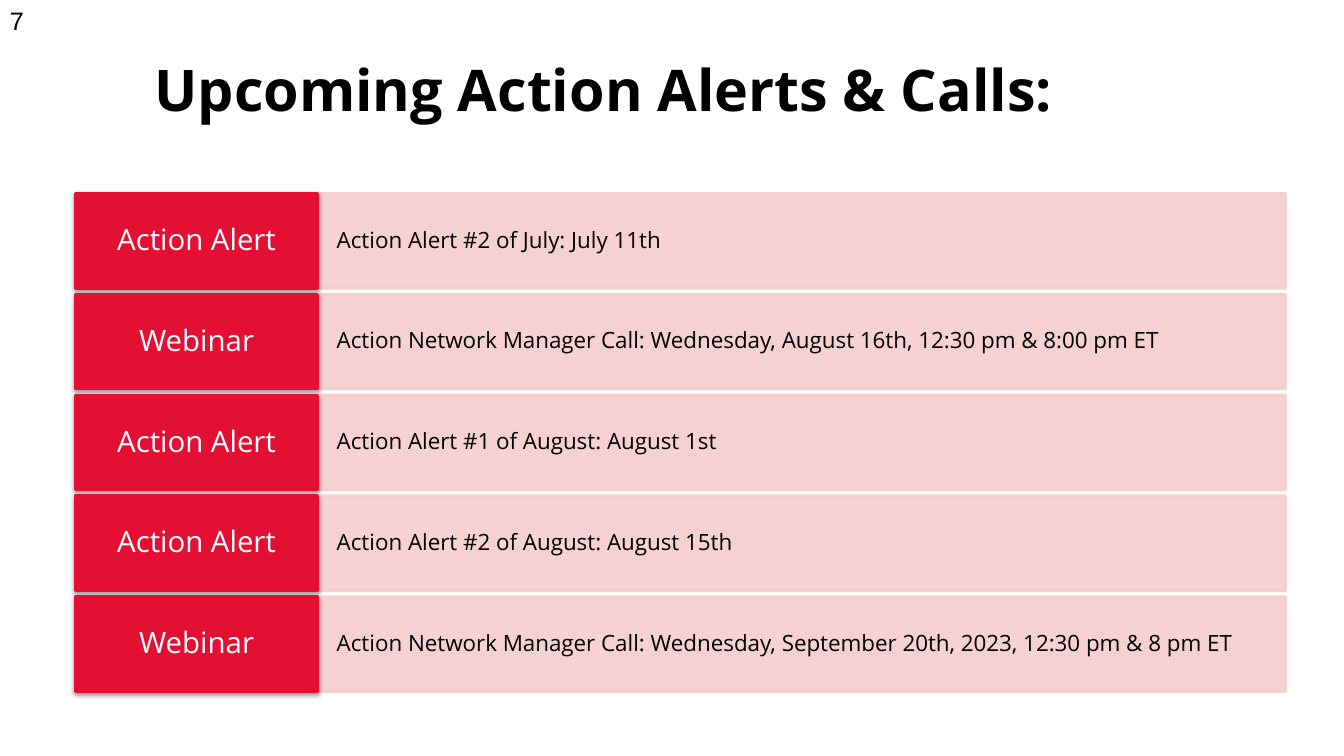
from lxml.etree import SubElement
from pptx import Presentation
from pptx.dml.color import RGBColor
from pptx.enum.shapes import MSO_SHAPE
from pptx.enum.text import MSO_ANCHOR, PP_ALIGN
from pptx.oxml.ns import qn
from pptx.util import Inches, Pt

# Content
PAGE_NUMBER = "7"
TITLE = "Upcoming Action Alerts & Calls:\u00a0"
EVENTS = [
    ("Action Alert", "Action Alert #2 of July: July 11th"),
    ("Webinar", "Action Network Manager Call: Wednesday, August 16th, 12:30 pm & 8:00 pm ET"),
    ("Action Alert", "Action Alert #1 of August: August 1st"),
    ("Action Alert", "Action Alert #2 of August: August 15th"),
    ("Webinar", "Action Network Manager Call:\u00a0Wednesday, September 20th, 2023, 12:30 pm & 8 pm ET"),
]

# Colours and grid, in inches
BLACK = RGBColor(0x00, 0x00, 0x00)
WHITE = RGBColor(0xFF, 0xFF, 0xFF)
RED = RGBColor(0xE4, 0x10, 0x34)
PINK = RGBColor(0xF5, 0xCC, 0xCE)
LEFT, TOP = 0.75, 1.92
LABEL_WIDTH, DETAIL_WIDTH = 2.4, 9.6
ROW_HEIGHT, ROW_PITCH = 0.94, 1.0


def write(shape, text, size, color, align, margins=(0.1, 0.05), font="Open Sans",
          bold=False, spacing=0.9, anchor=MSO_ANCHOR.MIDDLE):
    frame = shape.text_frame
    frame.text = text
    frame.word_wrap = True
    frame.vertical_anchor = anchor
    frame.margin_left = frame.margin_right = Inches(margins[0])
    frame.margin_top = frame.margin_bottom = Inches(margins[1])
    paragraph = frame.paragraphs[0]
    paragraph.alignment = align
    paragraph.line_spacing = spacing
    style = paragraph.runs[0].font
    style.name, style.size, style.bold = font, Pt(size), bold
    style.color.rgb = color


def add_cell(left, top, width, color):
    cell = slide.shapes.add_shape(MSO_SHAPE.RECTANGLE, Inches(left), Inches(top),
                                  Inches(width), Inches(ROW_HEIGHT))
    cell.fill.solid()
    cell.fill.fore_color.rgb = color
    cell.line.color.rgb = color
    cell.line.width = Pt(2)
    cell.shadow.inherit = False
    return cell


def set_opacity(parent, percent):
    for color in parent.iter(qn("a:srgbClr")):
        SubElement(color, qn("a:alpha"), val=str(percent * 1000))


def add_soft_shadow(cell):
    effects = cell._element.spPr.find(qn("a:effectLst"))
    shadow = SubElement(effects, qn("a:outerShdw"), blurRad=str(Pt(3.1)),
                        dist=str(Pt(1.6)), dir=str(90 * 60000), rotWithShape="0")
    SubElement(shadow, qn("a:srgbClr"), val=str(BLACK))
    set_opacity(shadow, 38)


presentation = Presentation()
presentation.slide_width, presentation.slide_height = Inches(13.33), Inches(7.5)
slide = presentation.slides.add_slide(presentation.slide_layouts[6])

# Page number and title
number = slide.shapes.add_textbox(0, 0, Inches(0.67), Inches(0.4))
write(number, PAGE_NUMBER, 18, BLACK, PP_ALIGN.LEFT, font="Arial", spacing=1.0,
      anchor=MSO_ANCHOR.TOP)
title = slide.shapes.add_textbox(Inches(0.67), Inches(0.3), Inches(10.79), Inches(1.25))
write(title, TITLE, 41, BLACK, PP_ALIGN.CENTER, bold=True)

# One row per event: pink detail, red label
for row, (kind, detail) in enumerate(EVENTS):
    top = TOP + row * ROW_PITCH
    detail_cell = add_cell(LEFT + LABEL_WIDTH, top, DETAIL_WIDTH, PINK)
    set_opacity(detail_cell._element.spPr, 90)
    write(detail_cell, detail, 16, BLACK, PP_ALIGN.LEFT, margins=(0.19, 0.24))
    label_cell = add_cell(LEFT, top, LABEL_WIDTH, RED)
    add_soft_shadow(label_cell)
    write(label_cell, kind, 21, WHITE, PP_ALIGN.CENTER, margins=(0.13, 0.09))

presentation.save("out.pptx")
